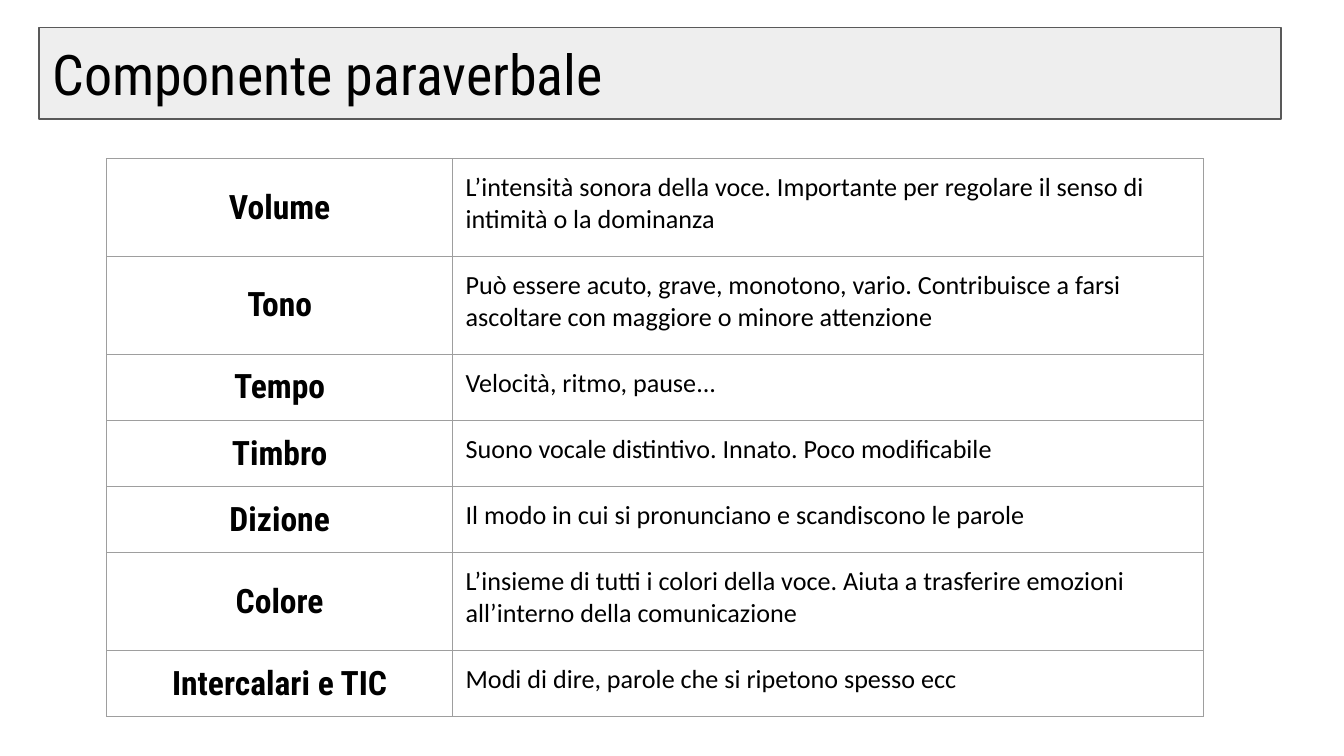
from lxml import etree
from pptx import Presentation
from pptx.dml.color import RGBColor
from pptx.enum import text
from pptx.oxml import parse_xml
from pptx.oxml.ns import nsdecls, qn
from pptx.util import Cm, Pt

TITLE = "Componente paraverbale"
COMPONENTS = [
    ("Volume", "L’intensità sonora della voce. Importante per regolare il senso di "
               "intimità o la dominanza"),
    ("Tono", "Può essere acuto, grave, monotono, vario. Contribuisce a farsi "
             "ascoltare con maggiore o minore attenzione"),
    ("Tempo", "Velocità, ritmo, pause..."),
    ("Timbro", "Suono vocale distintivo. Innato. Poco modificabile"),
    ("Dizione", "Il modo in cui si pronunciano e scandiscono le parole"),
    ("Colore", "L’insieme di tutti i colori della voce. Aiuta a trasferire emozioni "
               "all’interno della comunicazione"),
    ("Intercalari e TIC", "Modi di dire, parole che si ripetono spesso ecc"),
]
HEADING_FONT, BODY_FONT = "Roboto Condensed", "Calibri"
COLUMN_WIDTHS = (6.53, 14.2)
ONE_LINE, TWO_LINES = 1.25, 1.85
CHARS_PER_LINE = 70
PADDING = Cm(0.25)


def color(value):
    return RGBColor.from_string(value)


def write(frame, words, font, size, bold, align):
    frame.text = words
    paragraph = frame.paragraphs[0]
    paragraph.alignment = align
    style = paragraph.runs[0].font
    style.name, style.size, style.bold = font, Pt(size), bold
    style.color.rgb = color("000000")


def pad(target):
    target.margin_left = target.margin_right = PADDING
    target.margin_top = target.margin_bottom = PADDING


def add_borders(cell, line_color, width):
    """Draw all four sides; the lines must precede the cell's fill."""
    properties = cell._tc.get_or_add_tcPr()
    for position, side in enumerate(("lnL", "lnR", "lnT", "lnB")):
        line = etree.Element(qn(f"a:{side}"), w=str(Pt(width)))
        fill = etree.SubElement(line, qn("a:solidFill"))
        etree.SubElement(fill, qn("a:srgbClr"), val=line_color)
        properties.insert(position, line)


def format_title(title):
    title.left, title.top = Cm(0.74), Cm(0.52)
    title.width, title.height = Cm(23.47), Cm(1.73)
    title._element.spPr.append(parse_xml(
        f'<a:prstGeom {nsdecls("a")} prst="roundRect"><a:avLst>'
        '<a:gd name="adj" fmla="val 16667"/></a:avLst></a:prstGeom>'))
    title.fill.solid()
    title.fill.fore_color.rgb = color("EEEEEE")
    title.line.color.rgb = color("595959")
    title.line.width = Pt(0.75)
    frame = title.text_frame
    write(frame, TITLE, HEADING_FONT, 30, False, text.PP_ALIGN.LEFT)
    pad(frame)
    frame.word_wrap = True
    frame.auto_size = text.MSO_AUTO_SIZE.NONE
    frame.vertical_anchor = text.MSO_ANCHOR.MIDDLE


def add_components(slide):
    heights = [TWO_LINES if len(description) > CHARS_PER_LINE else ONE_LINE
               for _, description in COMPONENTS]
    table = slide.shapes.add_table(
        len(COMPONENTS), len(COLUMN_WIDTHS), Cm(2.02), Cm(3),
        Cm(sum(COLUMN_WIDTHS)), Cm(sum(heights))).table
    table.first_row = table.horz_banding = False
    for column, width in zip(table.columns, COLUMN_WIDTHS):
        column.width = Cm(width)
    for row, height, (name, description) in zip(table.rows, heights, COMPONENTS):
        row.height = Cm(height)
        name_cell, description_cell = row.cells
        write(name_cell.text_frame, name, HEADING_FONT, 18, True, text.PP_ALIGN.CENTER)
        write(description_cell.text_frame, description, BODY_FONT, 14, False,
              text.PP_ALIGN.LEFT)
        name_cell.vertical_anchor = text.MSO_ANCHOR.MIDDLE
        description_cell.vertical_anchor = text.MSO_ANCHOR.TOP
        for cell in (name_cell, description_cell):
            pad(cell)
            cell.fill.background()
            add_borders(cell, "9E9E9E", 0.75)


def main():
    deck = Presentation()
    deck.slide_width, deck.slide_height = Cm(25.4), Cm(14.29)
    slide = deck.slides.add_slide(deck.slide_layouts[5])
    format_title(slide.shapes.title)
    add_components(slide)
    deck.save("out.pptx")


if __name__ == "__main__":
    main()
